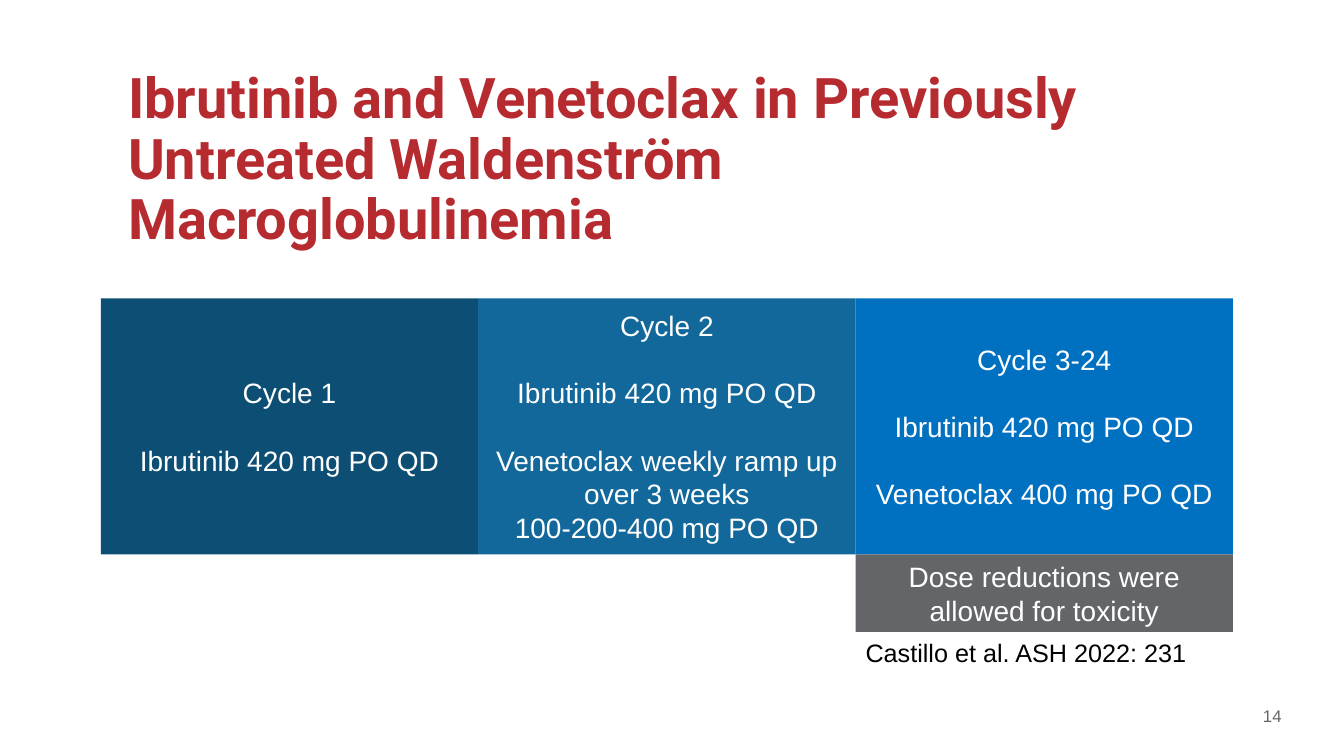
"""Build the treatment schedule slide with three cycle columns."""
import pptx
import pptx.util
import pptx.dml.color
import pptx.enum.shapes
import pptx.enum.text

Inch = pptx.util.Inches
Align = pptx.enum.text.PP_ALIGN
Anchor = pptx.enum.text.MSO_ANCHOR


def paint(hue):
    return pptx.dml.color.RGBColor.from_string(hue)


def write(frame, lines, size, hue, align=Align.LEFT, font="Arial", bold=False):
    for i, (text, gap) in enumerate(lines):
        para = frame.paragraphs[0] if i == 0 else frame.add_paragraph()
        para.alignment = align
        para.space_before = pptx.util.Pt(gap)
        run = para.add_run()
        run.text = text
        run.font.name = font
        run.font.size = pptx.util.Pt(size)
        run.font.bold = bold
        run.font.color.rgb = paint(hue)


deck = pptx.Presentation()
deck.slide_width, deck.slide_height = Inch(13.33), Inch(7.5)
slide = deck.slides.add_slide(deck.slide_layouts[5])
shapes = slide.shapes

title = shapes.title
title.left, title.top = Inch(1.17), Inch(0.65)
title.width, title.height = Inch(10.9), Inch(2.17)
frame = title.text_frame
frame.word_wrap = True
frame.auto_size = pptx.enum.text.MSO_AUTO_SIZE.NONE
frame.vertical_anchor = Anchor.TOP
write(frame, [("Ibrutinib and Venetoclax in Previously Untreated "
               "Waldenström Macroglobulinemia", 0)],
      40, "B62B30", font="Roboto", bold=True)
frame.paragraphs[0].line_spacing = 0.9

left, top, wide, high = 1, 2.96, 3.743, 2.54
last, base = left + 2 * wide, top + high
note = 0.77
gap = 24
dose = ("Ibrutinib 420 mg PO QD", gap)
boxes = [
    (0, top, high, "0D4E74", [("Cycle 1", 0), dose]),
    (1, top, high, "12689B", [
        ("Cycle 2", 0), dose,
        ("Venetoclax weekly ramp up over 3 weeks", gap),
        ("100-200-400 mg PO QD", 0)]),
    (2, top, high, "0070C0", [
        ("Cycle 3-24", 0), dose, ("Venetoclax 400 mg PO QD", gap)]),
    (2, base, note, "636569", [
        ("Dose reductions were allowed for toxicity", 0)]),
]
for col, y, tall, hue, lines in boxes:
    box = shapes.add_shape(
        pptx.enum.shapes.MSO_SHAPE.RECTANGLE,
        Inch(left + col * wide), Inch(y), Inch(wide), Inch(tall))
    box.shadow.inherit = False
    box.fill.solid()
    box.fill.fore_color.rgb = paint(hue)
    box.line.fill.background()
    box.text_frame.word_wrap = True
    box.text_frame.vertical_anchor = Anchor.MIDDLE
    write(box.text_frame, lines, 20, "FFFFFF", Align.CENTER)

cite = shapes.add_textbox(Inch(last), Inch(base + note), Inch(3.41), Inch(0.4))
write(cite.text_frame, [("Castillo et al. ASH 2022: 231", 0)], 18, "000000")

page = shapes.add_textbox(Inch(10.06), Inch(6.95), Inch(2.75), Inch(0.3))
page.text_frame.word_wrap = True
write(page.text_frame, [("14", 0)], 12, "636569", Align.RIGHT)

deck.save("out.pptx")
